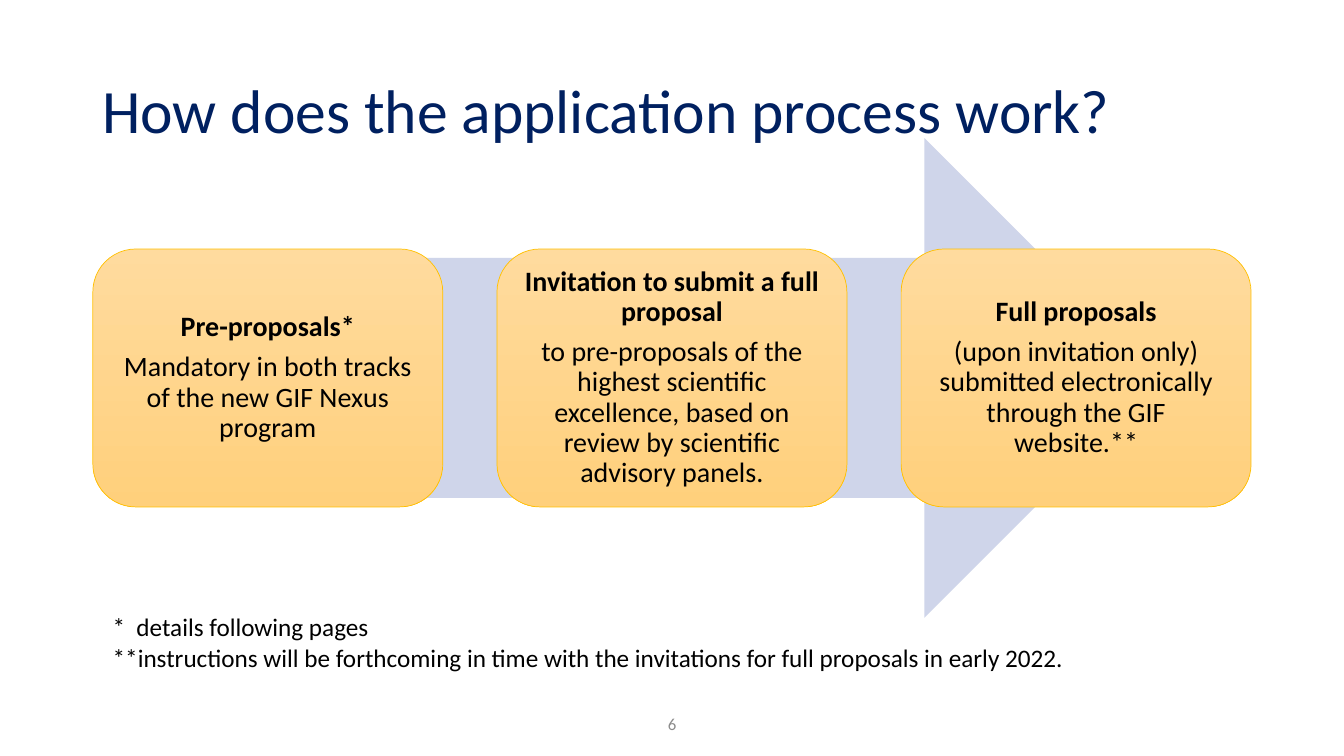
from lxml.etree import SubElement
from pptx import Presentation
from pptx.dml.color import RGBColor
from pptx.enum.shapes import MSO_SHAPE
from pptx.enum.text import MSO_ANCHOR, PP_ALIGN
from pptx.oxml.ns import qn
from pptx.util import Cm, Pt

NAVY = RGBColor(0x00, 0x20, 0x60)
BLACK = RGBColor(0x00, 0x00, 0x00)
GREY = RGBColor(0x8C, 0x8C, 0x8C)
PALE_BLUE = RGBColor(0xCF, 0xD5, 0xEA)
AMBER_LIGHT = RGBColor(0xFF, 0xDB, 0x9E)
AMBER_DARK = RGBColor(0xFF, 0xD0, 0x7C)
GOLD = RGBColor(0xFF, 0xC0, 0x00)

STEPS = [
    ("Pre-proposals*",
     "Mandatory in both tracks of the new GIF Nexus program"),
    ("Invitation to submit a full proposal",
     "to pre-proposals of the highest scientific excellence, "
     "based on review by scientific advisory panels."),
    ("Full proposals",
     "(upon invitation only) submitted electronically through the GIF website.**"),
]
NOTES = [
    "*\tdetails following pages",
    "**instructions will be forthcoming in time with the invitations "
    "for full proposals in early 2022.",
]


def add_span(para, text, size, color, bold=False):
    span = para.add_run()
    span.text = text
    span.font.name = "Calibri"
    span.font.size = Pt(size)
    span.font.bold = bold
    span.font.color.rgb = color


def add_text_box(page, left, top, width, height, anchor=MSO_ANCHOR.MIDDLE):
    frame = page.shapes.add_textbox(Cm(left), Cm(top), Cm(width), Cm(height)).text_frame
    frame.word_wrap = True
    frame.vertical_anchor = anchor
    return frame


def add_title(page, left, top, width, height):
    para = add_text_box(page, left, top, width, height).paragraphs[0]
    para.line_spacing = 0.9
    add_span(para, "How does the application process work?", 44, NAVY)


def add_step(page, left, top, width, height, heading, detail):
    card = page.shapes.add_shape(MSO_SHAPE.ROUNDED_RECTANGLE,
                                 Cm(left), Cm(top), Cm(width), Cm(height))
    card.shadow.inherit = False
    card.fill.gradient()
    card.fill.gradient_angle = 270
    for stop, color in zip(card.fill.gradient_stops, (AMBER_LIGHT, AMBER_DARK)):
        stop.color.rgb = color
    card.line.color.rgb = GOLD
    card.line.width = Pt(0.5)

    frame = card.text_frame
    frame.word_wrap = True
    frame.vertical_anchor = MSO_ANCHOR.MIDDLE
    frame.margin_left = frame.margin_right = Cm(0.21)
    frame.margin_top = frame.margin_bottom = Cm(0.21)
    heading_para, detail_para = frame.paragraphs[0], frame.add_paragraph()
    for para in (heading_para, detail_para):
        para.alignment = PP_ALIGN.CENTER
        para.line_spacing = 0.9
    heading_para.space_after = Pt(7)
    add_span(heading_para, heading, 20, BLACK, bold=True)
    add_span(detail_para, detail, 20, BLACK)


def add_process(page, left, top, width, height):
    """Draw the arrow over the full height and the steps spread evenly across it."""
    arrow_width = width * 0.85
    arrow = page.shapes.add_shape(MSO_SHAPE.RIGHT_ARROW,
                                  Cm(left + (width - arrow_width) / 2), Cm(top),
                                  Cm(arrow_width), Cm(height))
    arrow.shadow.inherit = False
    arrow.fill.solid()
    arrow.fill.fore_color.rgb = PALE_BLUE
    arrow.line.fill.background()

    step_width, step_height = 8.82, 6.5
    pitch = (width - step_width) / (len(STEPS) - 1)
    step_top = top + (height - step_height) / 2
    for index, (heading, detail) in enumerate(STEPS):
        add_step(page, left + index * pitch, step_top, step_width, step_height,
                 heading, detail)


def add_footnotes(page, left, top, width, height):
    frame = add_text_box(page, left, top, width, height, MSO_ANCHOR.TOP)
    for index, note in enumerate(NOTES):
        para = frame.add_paragraph() if index else frame.paragraphs[0]
        if "\t" in note:
            tabs = SubElement(para._p.get_or_add_pPr(), qn("a:tabLst"))
            SubElement(tabs, qn("a:tab"), pos=str(Cm(0.6)), algn="l")
        add_span(para, note, 18, BLACK)


def add_page_number(page, left, top, width, height):
    para = add_text_box(page, left, top, width, height).paragraphs[0]
    para.alignment = PP_ALIGN.CENTER
    add_span(para, "6", 12, GREY)


def main():
    deck = Presentation()
    deck.slide_width, deck.slide_height = Cm(33.87), Cm(19.05)
    page = deck.slides.add_slide(deck.slide_layouts[6])
    add_title(page, 2.33, 1.02, 29.21, 3.68)
    add_process(page, 2.34, 3.48, 29.19, 12.09)
    add_page_number(page, 13.13, 17.73, 7.62, 1.02)
    add_footnotes(page, 2.59, 15.29, 27.13, 1.8)
    deck.save("out.pptx")


if __name__ == "__main__":
    main()
